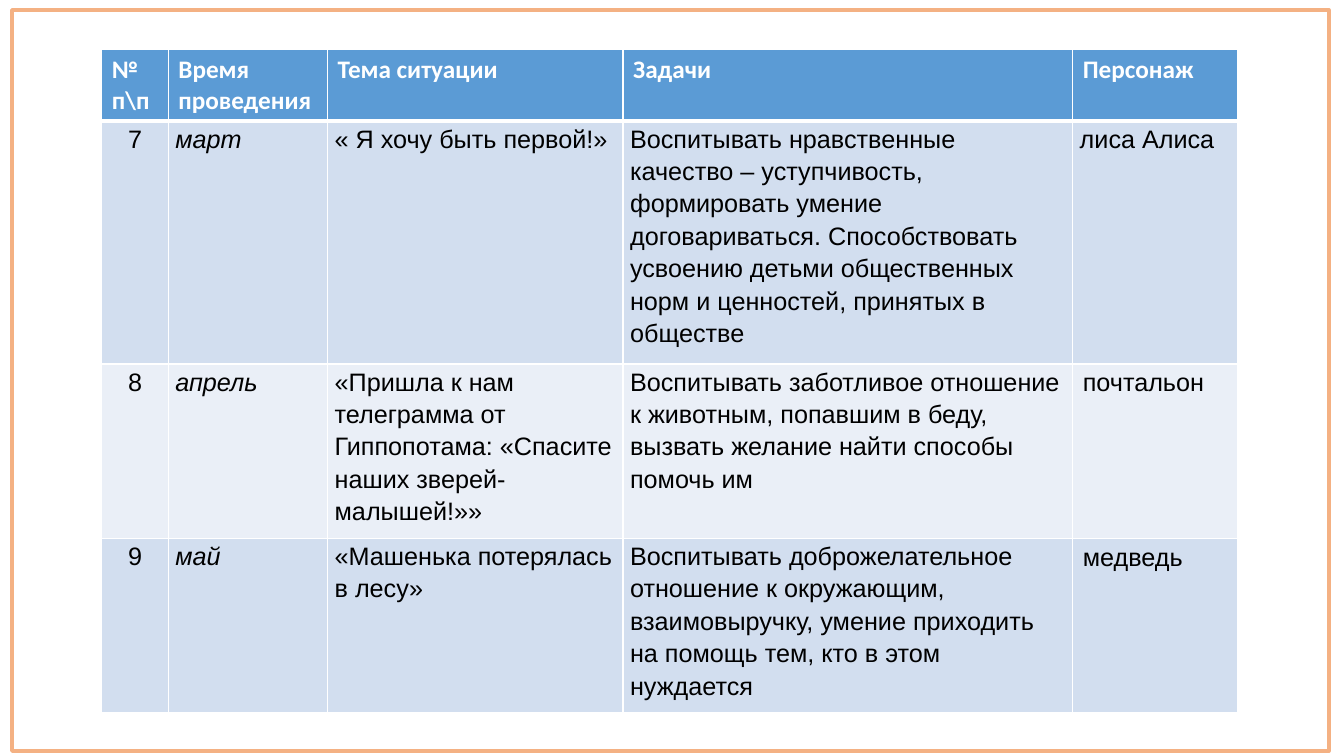
from dataclasses import dataclass

from lxml import etree
from pptx import Presentation
from pptx.dml.color import RGBColor
from pptx.enum.shapes import MSO_SHAPE
from pptx.enum.text import PP_ALIGN
from pptx.oxml.ns import qn
from pptx.table import _Cell
from pptx.util import Inches, Pt

RECTANGLE = MSO_SHAPE.RECTANGLE
LEFT, CENTER = PP_ALIGN.LEFT, PP_ALIGN.CENTER
WHITE, BLACK = "FFFFFF", "000000"
HEADER_FILL, BAND_FILLS = "5B9BD5", ("D2DEEF", "EAEFF7")
FRAME_COLOR = "F4B183"

COLUMN_WIDTHS = (0.66, 1.58, 2.93, 4.46, 1.64)
ROW_HEIGHTS = (0.7, 2.41, 1.73, 1.73)
COMPACT = {"margin_left": Inches(0.07), "margin_right": Inches(0.07),
           "margin_top": Inches(0), "margin_bottom": Inches(0)}


@dataclass(frozen=True)
class CellStyle:
    font: dict
    color: str = BLACK
    alignment: PP_ALIGN = LEFT
    compact: bool = True


BODY_FONT = {"name": "Arial", "size": Pt(18), "bold": False, "italic": False}
HEADER = CellStyle(BODY_FONT | {"name": "Calibri", "bold": True}, WHITE, compact=False)
NUMBER = CellStyle(BODY_FONT, alignment=CENTER)
MONTH = CellStyle(BODY_FONT | {"italic": True})
BODY = CellStyle(BODY_FONT)
LOOSE = CellStyle(BODY_FONT, compact=False)


@dataclass(frozen=True)
class Situation:
    number: str
    month: str
    theme: str
    tasks: str
    character: str
    character_style: CellStyle = LOOSE

    def styled_texts(self) -> list[tuple[str, CellStyle]]:
        return [(self.number, NUMBER), (self.month, MONTH), (self.theme, BODY),
                (self.tasks, BODY), (self.character, self.character_style)]


HEADINGS = ("№ п\\п", "Время проведения", "Тема ситуации", "Задачи", "Персонаж")
SITUATIONS = (
    Situation("7", "март", "« Я хочу быть первой!»",
              "Воспитывать нравственные качество – уступчивость, формировать умение "
              "договариваться. Способствовать усвоению детьми общественных норм и "
              "ценностей, принятых в обществе", "лиса Алиса", BODY),
    Situation("8", "апрель",
              "«Пришла к нам телеграмма от Гиппопотама: «Спасите наших зверей-малышей!»»",
              "Воспитывать заботливое отношение к животным, попавшим в беду, "
              "вызвать желание найти способы помочь им", "почтальон"),
    Situation("9", "май", "«Машенька потерялась в лесу»",
              "Воспитывать доброжелательное отношение к окружающим, взаимовыручку, "
              "умение приходить на помощь тем, кто в этом нуждается", "медведь"),
)


def rgb(value: str) -> RGBColor:
    return RGBColor.from_string(value)


def set_attributes(target: object, values: dict) -> None:
    for name, value in values.items():
        setattr(target, name, value)


def add_borders(cell: _Cell, widths: dict[str, float]) -> None:
    """Add white cell borders; the schema wants them before the fill."""
    properties = cell._tc.get_or_add_tcPr()
    for position, (side, width) in enumerate(widths.items()):
        line = etree.Element(qn(f"a:ln{side}"), w=str(Pt(width)))
        fill = etree.SubElement(line, qn("a:solidFill"))
        etree.SubElement(fill, qn("a:srgbClr"), val=WHITE)
        properties.insert(position, line)


def fill_cell(cell: _Cell, text: str, style: CellStyle, fill: str,
              borders: dict[str, float]) -> None:
    cell.fill.solid()
    cell.fill.fore_color.rgb = rgb(fill)
    add_borders(cell, borders)
    para = cell.text_frame.paragraphs[0]
    para.alignment = style.alignment
    if style.compact:
        set_attributes(cell, COMPACT)
        para.line_spacing = 1.15
    span = para.add_run()
    span.text = text
    set_attributes(span.font, style.font)
    span.font.color.rgb = rgb(style.color)


def add_schedule(page) -> None:
    rows = [[(heading, HEADER) for heading in HEADINGS]]
    rows += [situation.styled_texts() for situation in SITUATIONS]
    table = page.shapes.add_table(
        len(rows), len(HEADINGS), Inches(1.01), Inches(0.49),
        Inches(sum(COLUMN_WIDTHS)), Inches(sum(ROW_HEIGHTS))).table
    for column, width in zip(table.columns, COLUMN_WIDTHS):
        column.width = Inches(width)
    for index, (row, height, entries) in enumerate(zip(table.rows, ROW_HEIGHTS, rows)):
        row.height = Inches(height)
        fill = BAND_FILLS[(index - 1) % 2] if index else HEADER_FILL
        borders = {"L": 1, "R": 1, "T": 3 if index == 1 else 1, "B": 1 if index else 3}
        for cell, (text, style) in zip(row.cells, entries):
            fill_cell(cell, text, style, fill, borders)


def add_frame(page) -> None:
    frame = page.shapes.add_shape(
        RECTANGLE, Inches(0.12), Inches(0.1), Inches(13.06), Inches(7.35))
    frame.shadow.inherit = False
    frame.fill.background()
    frame.line.color.rgb = rgb(FRAME_COLOR)
    frame.line.width = Pt(2.75)


def main() -> None:
    deck = Presentation()
    deck.slide_width, deck.slide_height = Inches(13.33), Inches(7.5)
    page = deck.slides.add_slide(deck.slide_layouts[6])
    add_schedule(page)
    add_frame(page)
    deck.save("out.pptx")


if __name__ == "__main__":
    main()
